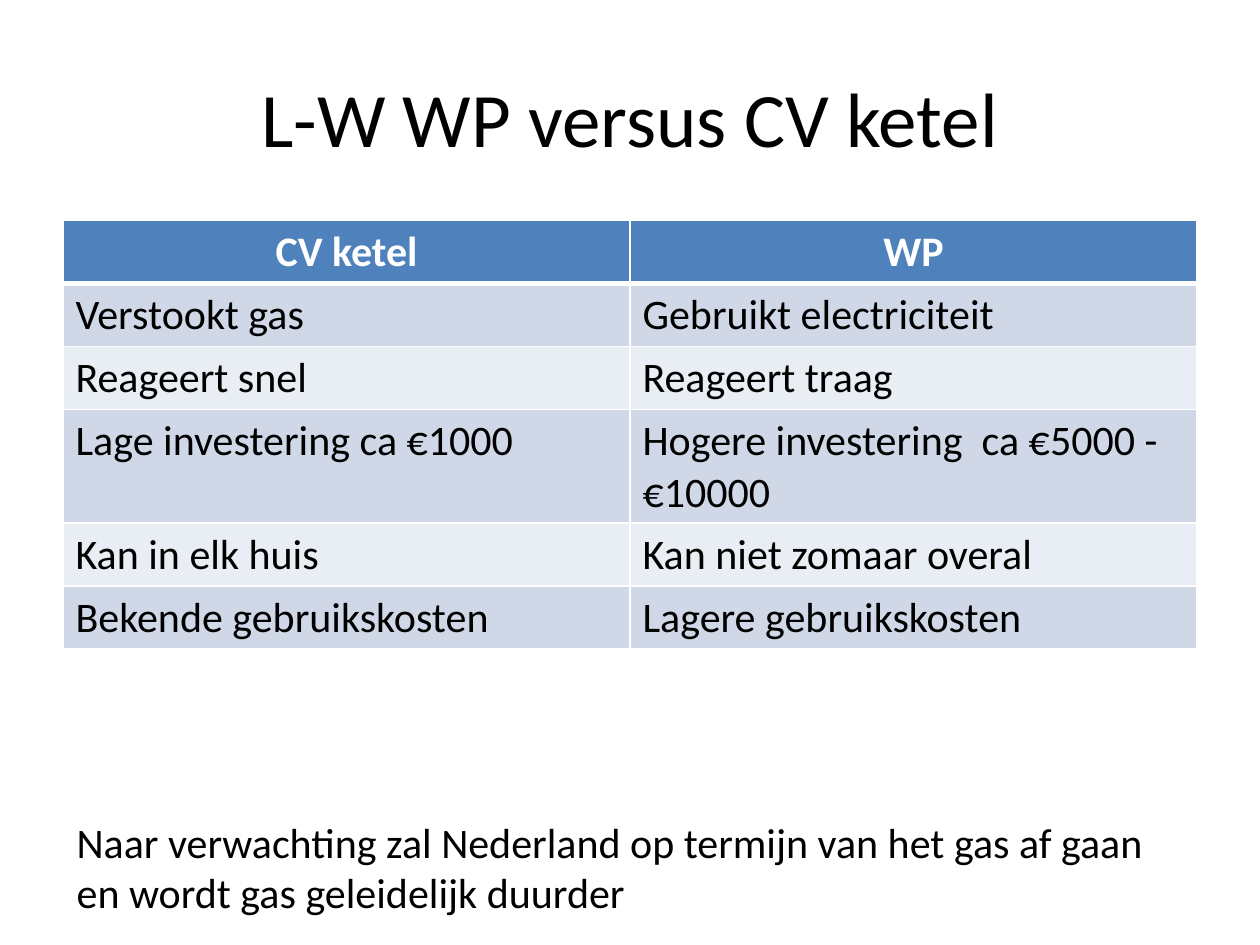
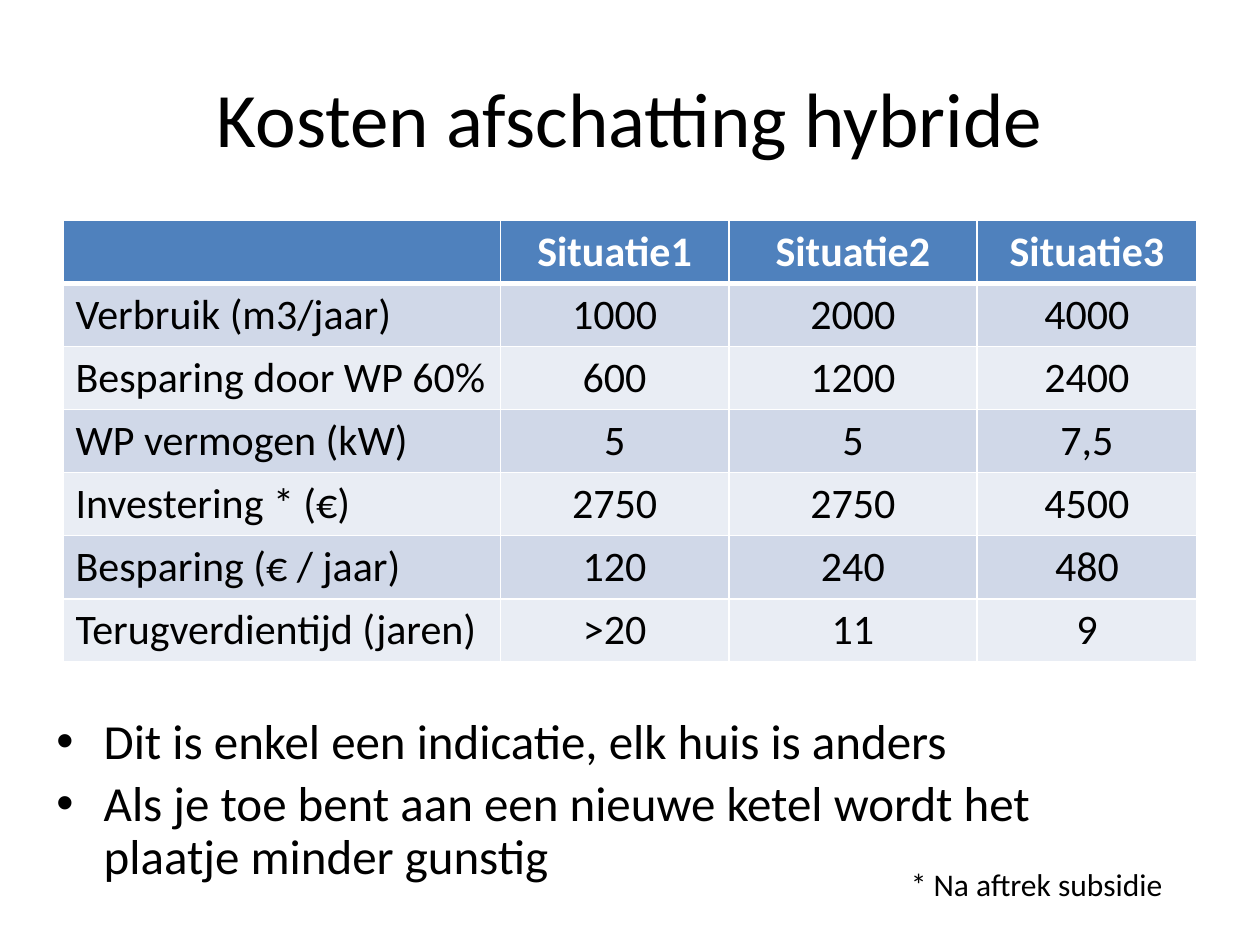
from lxml import etree
from pptx import Presentation
from pptx.dml.color import RGBColor
from pptx.enum.text import MSO_ANCHOR, PP_ALIGN
from pptx.oxml.ns import qn
from pptx.util import Pt

LEFT, CENTER = PP_ALIGN.LEFT, PP_ALIGN.CENTER
TOP, MIDDLE = MSO_ANCHOR.TOP, MSO_ANCHOR.MIDDLE
BLACK = RGBColor(0x00, 0x00, 0x00)
WHITE = RGBColor(0xFF, 0xFF, 0xFF)
BLUE = RGBColor(0x4F, 0x81, 0xBD)
BANDS = RGBColor(0xE9, 0xED, 0xF4), RGBColor(0xD0, 0xD8, 0xE8)
FONT = "Calibri"
THIN, THICK = 1, 3
ROW = 29.5

HEAT = [
    ("CV ketel", "WP"),
    ("Verstookt gas", "Gebruikt electriciteit"),
    ("Reageert snel", "Reageert traag"),
    ("Lage investering ca €1000", "Hogere investering  ca €5000 - €10000"),
    ("Kan in elk huis", "Kan niet zomaar overal"),
    ("Bekende gebruikskosten", "Lagere gebruikskosten"),
]
COSTS = [
    ("", "Situatie1", "Situatie2", "Situatie3"),
    ("Verbruik (m3/jaar)", "1000", "2000", "4000"),
    ("Besparing door WP 60%", "600", "1200", "2400"),
    ("WP vermogen (kW)", "5", "5", "7,5"),
    ("Investering * (€)", "2750", "2750", "4500"),
    ("Besparing (€ / jaar)", "120", "240", "480"),
    ("Terugverdientijd (jaren)", ">20", "11", "9"),
]


class Deck:
    """Holds the shared style and the slide being built."""

    def __init__(self):
        self.prs = Presentation()
        self.prs.slide_width, self.prs.slide_height = Pt(720), Pt(540)
        self.slide = None

    def page(self, title):
        self.slide = self.prs.slides.add_slide(self.prs.slide_layouts[6])
        self.text([title], (36, 21.6, 648, 90), 44, CENTER, MIDDLE)

    def style(self, para, size, color=BLACK, bold=False, align=LEFT):
        para.alignment = align
        form = {"name": FONT, "size": Pt(size), "bold": bold}
        for key, value in form.items():
            setattr(para.font, key, value)
        para.font.color.rgb = color

    def text(self, lines, box, size, align=LEFT, anchor=TOP):
        frame = self.slide.shapes.add_textbox(*map(Pt, box)).text_frame
        frame.word_wrap = True
        frame.vertical_anchor = anchor
        frame.text = "\n".join(lines)
        for para in frame.paragraphs:
            self.style(para, size, align=align)
        return frame

    def bullets(self, lines, box, size):
        for para in self.text(lines, box, size).paragraphs:
            para.line_spacing = 0.9
            para.space_before = Pt(size * 0.2)
            props = para._p.get_or_add_pPr()
            props.set("marL", str(Pt(27)))
            props.set("indent", str(-Pt(27)))
            face = etree.SubElement(props, qn("a:buFont"))
            face.set("typeface", "Arial")
            etree.SubElement(props, qn("a:buChar")).set("char", "•")
            props.append(props.find(qn("a:defRPr")))

    def edges(self, cell, top, base):
        props = cell._tc.get_or_add_tcPr()
        sides = {"L": THIN, "R": THIN, "T": top, "B": base}
        for side, width in sides.items():
            line = etree.SubElement(props, qn(f"a:ln{side}"))
            line.set("w", str(Pt(width)))
            fill = etree.SubElement(line, qn("a:solidFill"))
            etree.SubElement(fill, qn("a:srgbClr")).set("val", str(WHITE))

    def table(self, rows, widths, height, align):
        shape = self.slide.shapes.add_table(
            len(rows), len(widths), Pt(36), Pt(126), Pt(648), Pt(height))
        grid = shape.table
        for col, width in zip(grid.columns, widths):
            col.width = Pt(width)
        for r, row in enumerate(rows):
            grid.rows[r].height = Pt(ROW)
            head = r == 0
            for c, word in enumerate(row):
                cell = grid.cell(r, c)
                cell.text = word
                self.edges(cell, THICK if r == 1 else THIN,
                           THICK if head else THIN)
                cell.fill.solid()
                cell.fill.fore_color.rgb = BLUE if head else BANDS[r % 2]
                self.style(cell.text_frame.paragraphs[0], 24,
                           WHITE if head else BLACK, head,
                           CENTER if head or c else LEFT)
                if c and not head:
                    cell.text_frame.paragraphs[0].alignment = align
        shape.height = Pt(height)


def main():
    deck = Deck()
    deck.page("L-W WP versus CV ketel")
    deck.table(HEAT, (324, 324), 244.8, LEFT)
    deck.text(["Naar verwachting zal Nederland op termijn van het gas af gaan "
               "en wordt gas geleidelijk duurder"],
              (36.7, 463, 635, 65.5), 24)

    deck.page("Kosten afschatting hybride")
    deck.table(COSTS, (250, 130.5, 141.8, 125.7), 252, CENTER)
    deck.text(["* Na aftrek subsidie"], (513.4, 491, 181.4, 29), 18)
    deck.bullets(["Dit is enkel een indicatie, elk huis is anders",
                  "Als je toe bent aan een nieuwe ketel wordt het "
                  "plaatje minder gunstig"],
                 (25.2, 406, 648, 113), 28)
    deck.prs.save("out.pptx")


if __name__ == "__main__":
    main()
